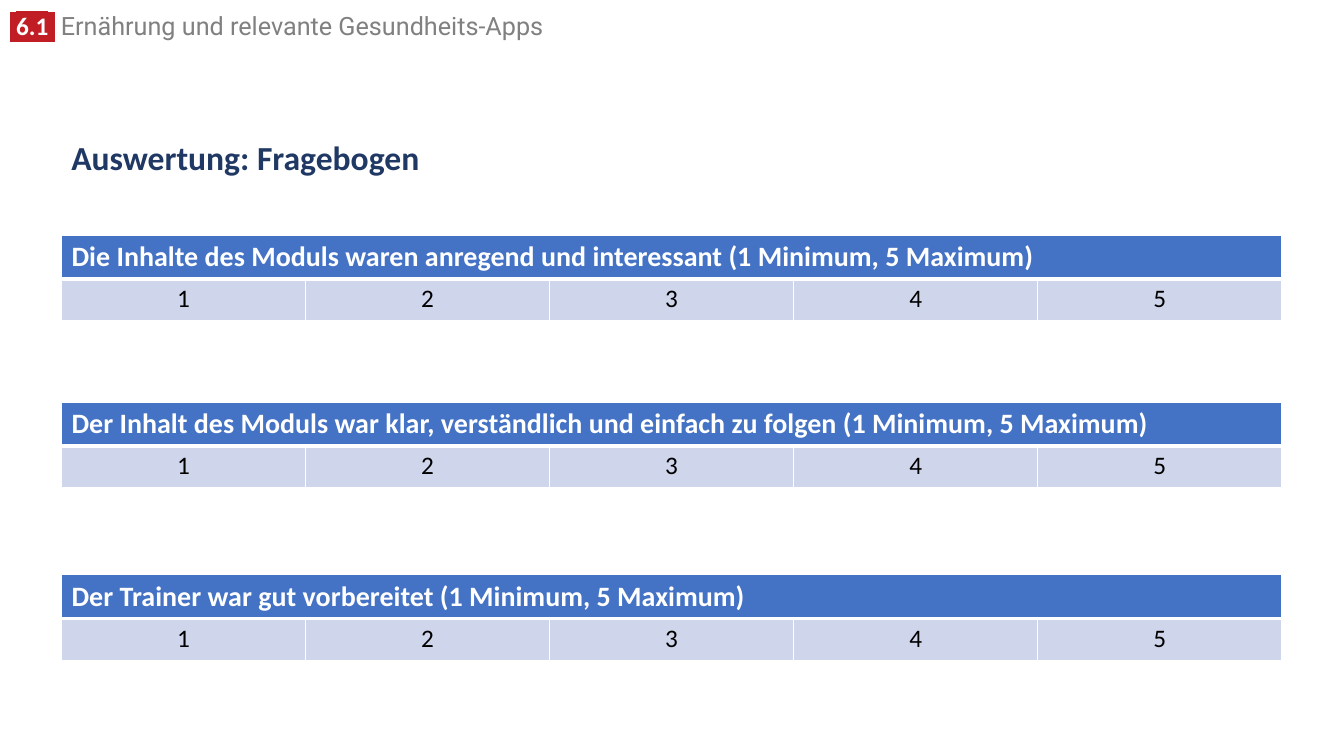
from lxml import etree
from pptx import Presentation
from pptx.dml.color import RGBColor
from pptx.enum.text import MSO_ANCHOR, PP_ALIGN
from pptx.oxml.ns import qn
from pptx.util import Cm, Pt

LEFT, CENTER = PP_ALIGN.LEFT, PP_ALIGN.CENTER
TOP, MIDDLE = MSO_ANCHOR.TOP, MSO_ANCHOR.MIDDLE

MARGIN = 1.55
COLUMN_WIDTH, ROW_HEIGHT = 6.15, 1.06
SCALE = ["1", "2", "3", "4", "5"]
QUESTIONS = [
    (5.92, "Die Inhalte des Moduls waren anregend und interessant (1 Minimum, 5 Maximum)"),
    (10.13, "Der Inhalt des Moduls war klar, verständlich und einfach zu folgen (1 Minimum, 5 Maximum)"),
    (14.48, "Der Trainer war gut vorbereitet (1 Minimum, 5 Maximum)"),
]


def color(code):
    return RGBColor.from_string(code)


class QuestionnaireSlide:
    white, red, gray, navy = "FFFFFF", "C01E24", "808080", "203864"
    blue, pale, black = "4472C4", "CFD5EA", "000000"
    body, heading = "Calibri", "Roboto"

    def __init__(self, deck):
        self.slide = deck.slides.add_slide(deck.slide_layouts[6])

    def run(self, paragraph, words, ink, size, face=body, bold=False, highlight=None):
        run = paragraph.add_run()
        run.text = words
        style = {"name": face, "size": Pt(size), "bold": bold}
        for attribute, value in style.items():
            setattr(run.font, attribute, value)
        run.font.color.rgb = color(ink)
        if highlight:
            marker = etree.Element(qn("a:highlight"))
            etree.SubElement(marker, qn("a:srgbClr"), val=highlight)
            run.font._element.find(qn("a:solidFill")).addnext(marker)

    def text(self, left, top, width, height, runs, spacing, anchor=TOP):
        box = self.slide.shapes.add_textbox(Cm(left), Cm(top), Cm(width), Cm(height))
        frame = box.text_frame
        frame.word_wrap = True
        frame.vertical_anchor = anchor
        paragraph = frame.paragraphs[0]
        paragraph.line_spacing = spacing
        for run in runs:
            self.run(paragraph, **run)

    def cell(self, cell, words, fill, align, bottom, **style):
        properties = cell._tc.get_or_add_tcPr()
        borders = {"lnL": 1, "lnR": 1, "lnT": 1, "lnB": bottom}
        for side, points in borders.items():
            line = etree.SubElement(properties, qn(f"a:{side}"), w=str(Pt(points)))
            paint = etree.SubElement(line, qn("a:solidFill"))
            etree.SubElement(paint, qn("a:srgbClr"), val=self.white)
        cell.fill.solid()
        cell.fill.fore_color.rgb = color(fill)
        if words:
            paragraph = cell.text_frame.paragraphs[0]
            paragraph.alignment = align
            self.run(paragraph, words, **style)

    def question(self, top, wording):
        count = len(SCALE)
        table = self.slide.shapes.add_table(
            2, count, Cm(MARGIN), Cm(top), Cm(COLUMN_WIDTH * count), Cm(ROW_HEIGHT * 2)
        ).table
        for row in table.rows:
            row.height = Cm(ROW_HEIGHT)
        table.cell(0, 0).merge(table.cell(0, count - 1))
        for index, grade in enumerate(SCALE):
            table.columns[index].width = Cm(COLUMN_WIDTH)
            self.cell(table.cell(0, index), "" if index else wording, self.blue, LEFT, 3,
                      ink=self.white, size=20, bold=True)
            self.cell(table.cell(1, index), grade, self.pale, CENTER, 1,
                      ink=self.black, size=18)


def main():
    deck = Presentation()
    deck.slide_width, deck.slide_height = Cm(33.87), Cm(19.05)
    page = QuestionnaireSlide(deck)

    badge = {"ink": page.white, "size": 18, "bold": True, "highlight": page.red}
    badge_space = {**badge, "words": " ", "face": page.heading}
    page.text(0, 0.28, 24.18, 0.89, [
        badge_space,
        {**badge, "words": "6.1"},
        badge_space,
        {"words": " Ernährung und relevante Gesundheits-Apps", "ink": page.gray,
         "size": 18, "face": page.heading},
    ], 0.8)
    page.text(MARGIN, 3, 30.73, 2.03, [
        {"words": "Auswertung: Fragebogen", "ink": page.navy, "size": 24, "bold": True},
    ], 0.9, MIDDLE)
    for top, wording in QUESTIONS:
        page.question(top, wording)

    deck.save("out.pptx")


if __name__ == "__main__":
    main()
